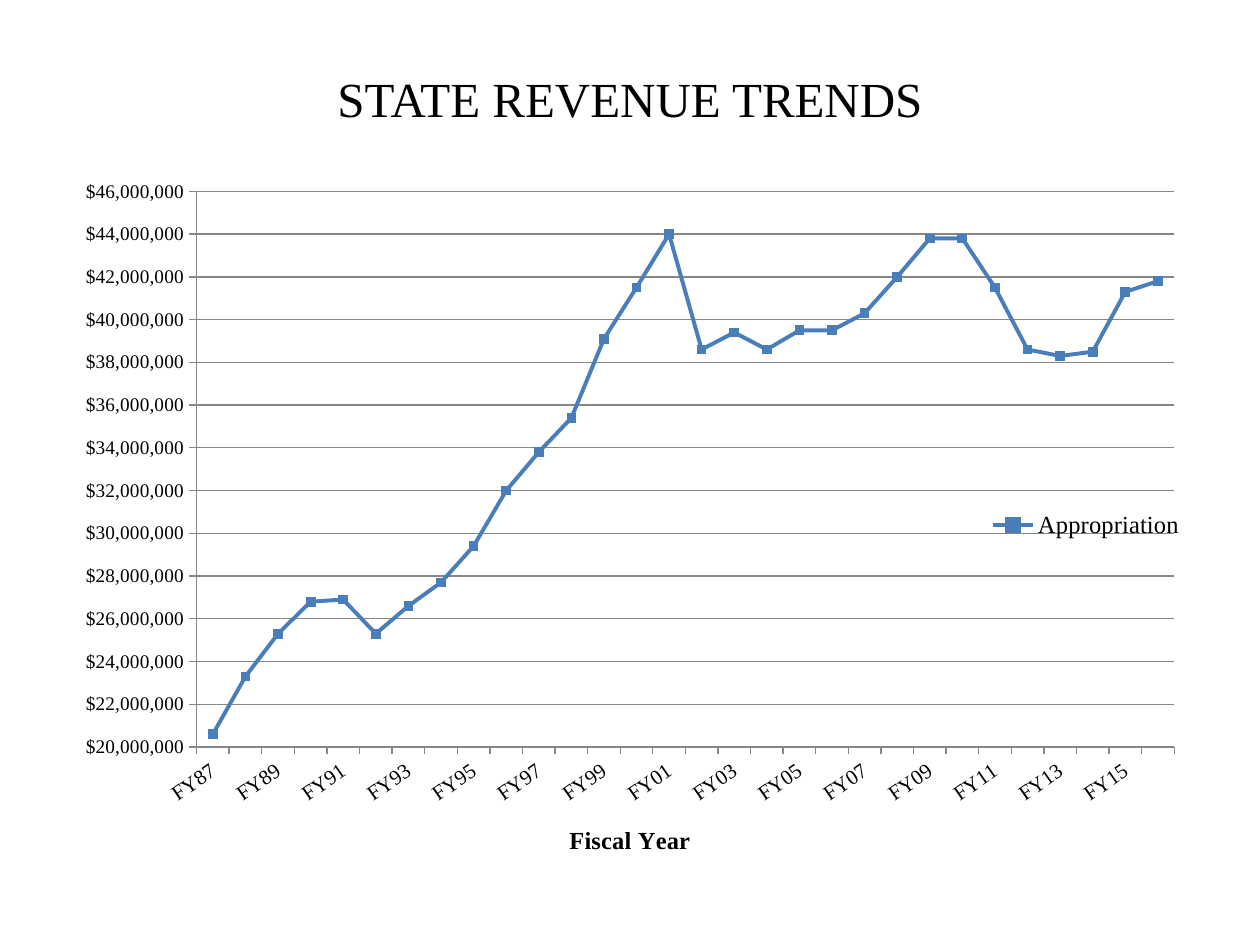
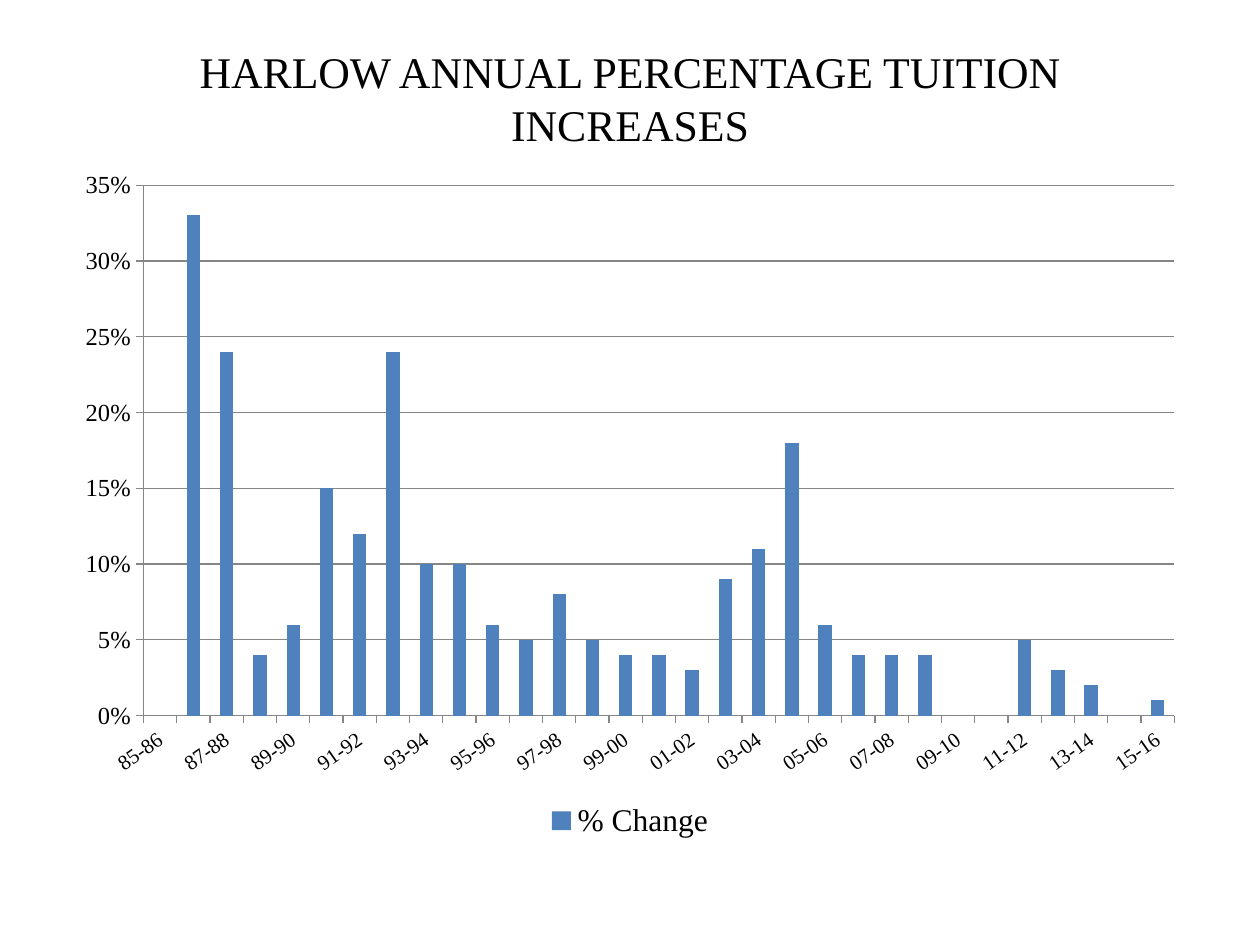
from pptx import Presentation
from pptx.chart.data import CategoryChartData
from pptx.dml.color import RGBColor
from pptx.enum.chart import XL_CHART_TYPE as ChartType
from pptx.enum.chart import XL_LEGEND_POSITION as LegendPosition
from pptx.enum.chart import XL_MARKER_STYLE as MarkerStyle
from pptx.enum.chart import XL_TICK_MARK as TickMark
from pptx.enum.text import MSO_ANCHOR, PP_ALIGN
from pptx.oxml import parse_xml
from pptx.oxml.ns import nsdecls, qn
from pptx.util import Inches, Pt

# Shared style
SERIF = "Times New Roman"
BLACK, BLUE, GRAY, WHITE = "000000", "4F81BD", "868686", "FFFFFF"
LINE_BLUE = "4A7EBB"
LABEL_ANGLE = -35
LABEL_STEP = 2
CHART_LEFT, CHART_WIDTH = 0.5, 9

# State appropriation by fiscal year, in millions of dollars
APPROPRIATIONS = [
    20.6, 23.3, 25.3, 26.8, 26.9, 25.3, 26.6, 27.7, 29.4, 32.0,
    33.8, 35.4, 39.1, 41.5, 44.0, 38.6, 39.4, 38.6, 39.5, 39.5,
    40.3, 42.0, 43.8, 43.8, 41.5, 38.6, 38.3, 38.5, 41.3, 41.8,
]
# Tuition increase by academic year, in percent
TUITION_INCREASES = [
    0, 33, 24, 4, 6, 15, 12, 24, 10, 10, 6, 5, 8, 5, 4, 4,
    3, 9, 11, 18, 6, 4, 4, 4, 0, 0, 5, 3, 2, 0, 1,
]


def color(hex_code):
    return RGBColor.from_string(hex_code)


def set_font(font, size, bold=False):
    font.name = SERIF
    font.size = Pt(size)
    font.bold = bold
    font.color.rgb = color(BLACK)


def add_slide(deck, heading, heading_size):
    """Add a white slide with its centred heading."""
    slide = deck.slides.add_slide(deck.slide_layouts[6])
    slide.background.fill.solid()
    slide.background.fill.fore_color.rgb = color(WHITE)
    frame = slide.shapes.add_textbox(
        Inches(0.5), Inches(0.3), Inches(9), Inches(0.95)).text_frame
    frame.word_wrap = True
    frame.vertical_anchor = MSO_ANCHOR.MIDDLE
    paragraph = frame.paragraphs[0]
    paragraph.text = heading
    paragraph.alignment = PP_ALIGN.CENTER
    set_font(paragraph.font, heading_size)
    return slide


def add_trend_chart(slide, kind, top, height, years, name, values, number_format):
    data = CategoryChartData(number_format=number_format)
    data.categories = years
    data.add_series(name, values)
    chart = slide.shapes.add_chart(
        kind, Inches(CHART_LEFT), Inches(top), Inches(CHART_WIDTH),
        Inches(height), data).chart
    chart.has_title = False
    set_font(chart.font, 18)
    chart.plots[0].vary_by_categories = False
    return chart


def find_part(chart, tag):
    return chart.element.find(f".//{qn(tag)}")


def place_part(chart, tag, index, box, chart_height, inner=False):
    """Fix the plot or legend at a box given in inches inside the chart."""
    part = find_part(chart, tag)
    for old_layout in part.findall(qn("c:layout")):
        part.remove(old_layout)
    target = '<c:layoutTarget val="inner"/>' if inner else ""
    modes = '<c:xMode val="edge"/><c:yMode val="edge"/>'
    sizes = (CHART_WIDTH, chart_height) * 2
    lengths = "".join(
        f'<c:{side} val="{length / size:.4f}"/>'
        for side, length, size in zip("xywh", box, sizes))
    part.insert(index, parse_xml(
        f'<c:layout {nsdecls("c")}><c:manualLayout>{target}{modes}{lengths}'
        '</c:manualLayout></c:layout>'))


def style_axis(axis, size):
    set_font(axis.tick_labels.font, size)
    axis.major_tick_mark = TickMark.OUTSIDE
    axis.minor_tick_mark = TickMark.NONE
    axis.format.line.color.rgb = color(GRAY)
    axis.format.line.width = Pt(0.75)


def style_year_axis(chart):
    """Slant the year labels and show every second one."""
    style_axis(chart.category_axis, 12)
    chart.category_axis.has_major_gridlines = False
    year_axis = find_part(chart, "c:catAx")
    body = year_axis.find(f"{qn('c:txPr')}/{qn('a:bodyPr')}")
    body.set("rot", str(LABEL_ANGLE * 60000))
    body.set("vert", "horz")
    skip = parse_xml(f'<c:tickLblSkip {nsdecls("c")} val="{LABEL_STEP}"/>')
    year_axis.find(qn("c:noMultiLvlLbl")).addprevious(skip)


def style_value_axis(axis, size, low, high, step, number_format):
    style_axis(axis, size)
    axis.minimum_scale, axis.maximum_scale = low, high
    axis.major_unit = step
    axis.tick_labels.number_format = number_format
    axis.tick_labels.number_format_is_linked = False
    axis.has_major_gridlines = True
    gridline = axis.major_gridlines.format.line
    gridline.color.rgb = color(GRAY)
    gridline.width = Pt(0.75)


def add_legend(chart, position, size, overlay=False):
    chart.has_legend = True
    chart.legend.position = position
    chart.legend.include_in_layout = overlay
    set_font(chart.legend.font, size)


def add_revenue_slide(deck):
    slide = add_slide(deck, "STATE REVENUE TRENDS", 28)
    height = 5.67
    years = [f"FY{year % 100:02d}" for year in range(1987, 2016)] + ["FY16*"]
    dollars = [round(millions * 1_000_000) for millions in APPROPRIATIONS]
    dollar_format = '"$"#,##0'
    chart = add_trend_chart(slide, ChartType.LINE_MARKERS, 1.33, height,
                            years, "Appropriation", dollars, dollar_format)

    # Axes
    style_year_axis(chart)
    axis_title = chart.category_axis.axis_title.text_frame.paragraphs[0]
    axis_title.text = "Fiscal Year"
    set_font(axis_title.font, 14, bold=True)
    style_value_axis(chart.value_axis, 11, 20_000_000, 46_000_000,
                     2_000_000, dollar_format)

    # Appropriation line
    appropriation = chart.plots[0].series[0]
    appropriation.smooth = False
    appropriation.format.line.color.rgb = color(LINE_BLUE)
    appropriation.format.line.width = Pt(2.25)
    marker = appropriation.marker
    marker.style, marker.size = MarkerStyle.SQUARE, 5
    marker.format.fill.solid()
    marker.format.fill.fore_color.rgb = color(BLUE)
    marker.format.line.color.rgb = color(LINE_BLUE)

    # Legend over the plot
    add_legend(chart, LegendPosition.RIGHT, 14, overlay=True)
    place_part(chart, "c:plotArea", 0, (1.06, 0.19, 7.76, 4.41), height, inner=True)
    place_part(chart, "c:legend", 1, (7.32, 2.65, 1.6, 0.37), height)


def add_tuition_slide(deck):
    slide = add_slide(deck, "HARLOW ANNUAL PERCENTAGE TUITION INCREASES", 25)
    height = 5.45
    years = [f"{year % 100:02d}-{(year + 1) % 100:02d}"
             for year in range(1985, 2016)]
    shares = [percent / 100 for percent in TUITION_INCREASES]
    chart = add_trend_chart(slide, ChartType.COLUMN_CLUSTERED, 1.25, height,
                            years, "% Change", shares, "0%")

    # Axes
    style_year_axis(chart)
    style_value_axis(chart.value_axis, 14, 0, 0.35, 0.05, "0%")

    # Columns
    chart.plots[0].gap_width = 150
    increase = chart.plots[0].series[0]
    increase.format.fill.solid()
    increase.format.fill.fore_color.rgb = color(BLUE)

    add_legend(chart, LegendPosition.BOTTOM, 18)
    place_part(chart, "c:plotArea", 0, (0.64, 0.22, 8.18, 4.21), height, inner=True)


def main():
    deck = Presentation()
    deck.slide_width, deck.slide_height = Inches(10), Inches(7.5)
    add_revenue_slide(deck)
    add_tuition_slide(deck)
    deck.save("out.pptx")


if __name__ == "__main__":
    main()
